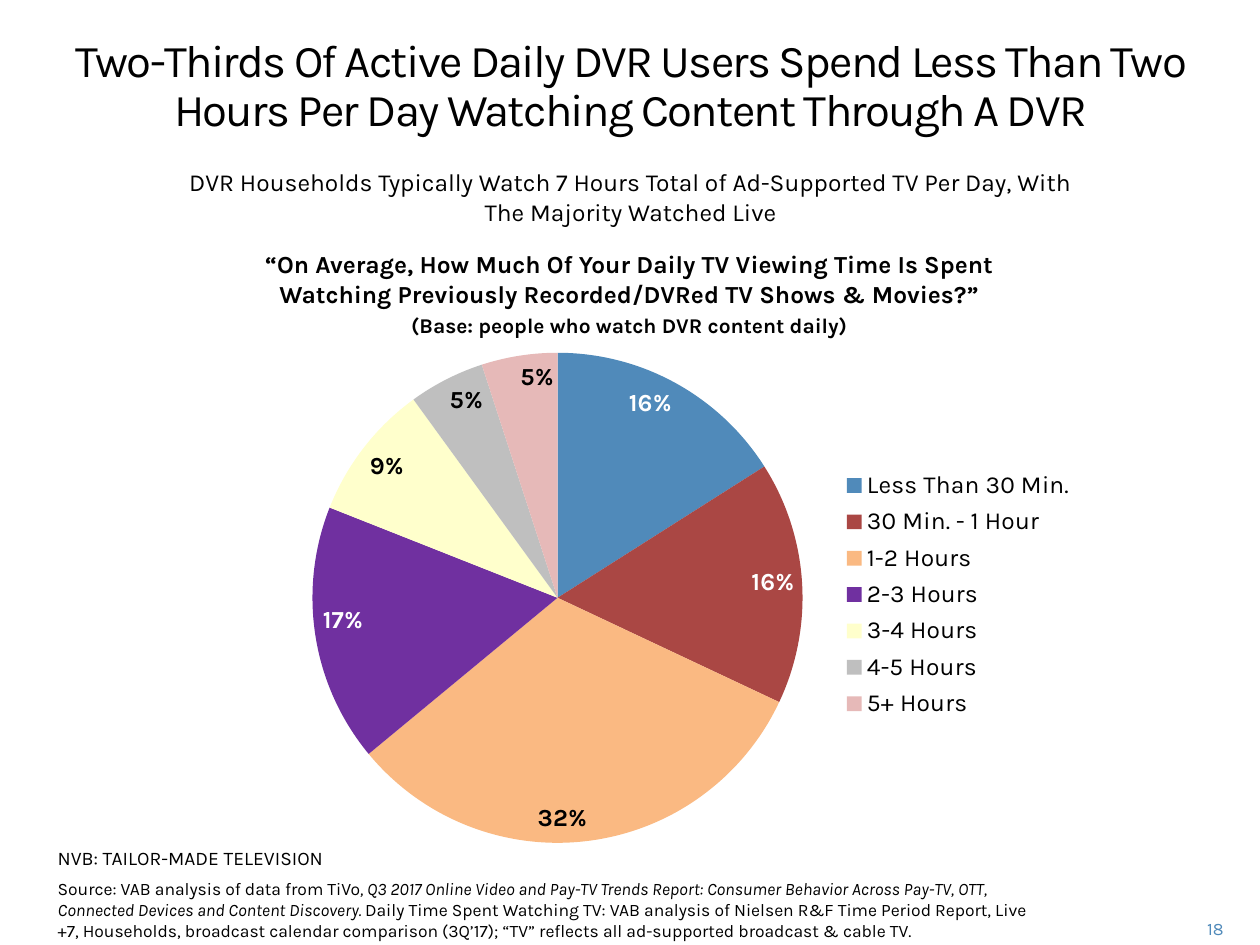
from dataclasses import dataclass

from lxml import etree
from pptx import Presentation
from pptx.chart.data import CategoryChartData
from pptx.dml.color import RGBColor
from pptx.enum.chart import XL_CHART_TYPE, XL_LABEL_POSITION, XL_LEGEND_POSITION
from pptx.enum.text import PP_ALIGN
from pptx.oxml.ns import qn
from pptx.util import Inches, Pt

PIE = XL_CHART_TYPE.PIE
INNER = XL_LABEL_POSITION.INSIDE_END
RIGHT_SIDE = XL_LEGEND_POSITION.RIGHT
LEFT, MID, RIGHT = PP_ALIGN.LEFT, PP_ALIGN.CENTER, PP_ALIGN.RIGHT


@dataclass(frozen=True)
class Theme:
    font: str = "Karla"
    ink: str = "000000"
    pale: str = "FFFFFF"
    blue: str = "508ABA"
    title: int = 26
    body: int = 14
    base: int = 12
    tag: int = 11
    note: int = 10


@dataclass(frozen=True)
class Box:
    left: float
    top: float
    width: float
    height: float

    def inches(self) -> tuple:
        return tuple(Inches(n) for n in (self.left, self.top, self.width, self.height))


@dataclass(frozen=True)
class Run:
    text: str
    italic: bool = False


@dataclass(frozen=True)
class Slice:
    name: str
    share: float
    fill: str
    ink: str


THEME = Theme()
SLICES = [
    Slice("Less Than 30 Min.", 0.16, THEME.blue, THEME.pale),
    Slice("30 Min. - 1 Hour", 0.16, "AA4744", THEME.pale),
    Slice("1-2 Hours", 0.32, "FAB982", THEME.ink),
    Slice("2-3 Hours", 0.17, "7030A0", THEME.pale),
    Slice("3-4 Hours", 0.09, "FFFFCC", THEME.ink),
    Slice("4-5 Hours", 0.05, "BFBFBF", THEME.ink),
    Slice("5+ Hours", 0.05, "E6B9B8", THEME.ink),
]
CHART = Box(1.25, 2.39, 8.33, 4.44)
PLOT = Box(2.48, 2.8, 3.89, 3.89)
LEGEND = Box(6.63, 3.68, 1.95, 2.08)


def style(font, size: int, color: str = THEME.ink, bold: bool = False) -> None:
    font.name = THEME.font
    font.size = Pt(size)
    font.bold = bold
    font.color.rgb = RGBColor.from_string(color)


def write(frame, runs: list[Run], *, size: int, color: str = THEME.ink,
          bold: bool = False, align=LEFT, track: float = 0,
          pitch: float = 0, before: float = 0) -> None:
    """Add a paragraph, using the first one while it is still empty."""
    para = frame.paragraphs[0] if not frame.text else frame.add_paragraph()
    para.alignment = align
    if pitch:
        para.line_spacing = Pt(pitch)
    if before:
        para.space_before = Pt(before)
    for part in runs:
        run = para.add_run()
        run.text = part.text
        style(run.font, size, color, bold)
        run.font.italic = part.italic
        if track:
            run.font._element.set("spc", str(round(track * 100)))


def add_box(slide, box: Box):
    frame = slide.shapes.add_textbox(*box.inches()).text_frame
    frame.word_wrap = True
    return frame


def place(node, box: Box, inner: bool = False) -> None:
    """Fix a chart part at a slide position, as fractions of the chart."""
    old = node.find(qn("c:layout"))
    if old is not None:
        node.remove(old)
    layout = etree.Element(qn("c:layout"))
    manual = etree.SubElement(layout, qn("c:manualLayout"))
    vals = {
        "xMode": "edge",
        "yMode": "edge",
        "x": (box.left - CHART.left) / CHART.width,
        "y": (box.top - CHART.top) / CHART.height,
        "w": box.width / CHART.width,
        "h": box.height / CHART.height,
    }
    if inner:
        vals = {"layoutTarget": "inner", **vals}
    for key, val in vals.items():
        etree.SubElement(manual, qn(f"c:{key}")).set("val", str(val))
    pos = node.find(qn("c:legendPos"))
    if pos is not None:
        pos.addnext(layout)
    else:
        node.insert(0, layout)


def add_pie(slide) -> None:
    data = CategoryChartData(number_format="0%")
    data.categories = [s.name for s in SLICES]
    data.add_series("Series 1", [s.share for s in SLICES])
    chart = slide.shapes.add_chart(PIE, *CHART.inches(), data).chart
    style(chart.font, THEME.body)
    chart.has_title = False
    chart.has_legend = True
    chart.legend.position = RIGHT_SIDE
    chart.legend.include_in_layout = False
    style(chart.legend.font, THEME.body)

    plot = chart.plots[0]
    plot.vary_by_categories = True
    plot.has_data_labels = True
    series = plot.series[0]
    labels = series.data_labels
    labels.show_value = True
    labels.number_format = "0%"
    labels.number_format_is_linked = False
    labels.position = INNER
    style(labels.font, THEME.body, bold=True)
    for i, part in enumerate(SLICES):
        point = series.points[i]
        point.format.fill.solid()
        point.format.fill.fore_color.rgb = RGBColor.from_string(part.fill)
        if part.ink != THEME.ink:
            style(point.data_label.font, THEME.body, part.ink, True)
            point.data_label.position = INNER

    area = chart._chartSpace.chart.plotArea
    place(area, PLOT, inner=True)
    place(chart.legend._element, LEGEND)


def main() -> None:
    deck = Presentation()
    deck.slide_width, deck.slide_height = Inches(10), Inches(7.5)
    slide = deck.slides.add_slide(deck.slide_layouts[6])
    add_pie(slide)

    write(add_box(slide, Box(0.32, 0.25, 9.37, 0.96)),
          [Run("Two-Thirds Of Active Daily DVR Users Spend Less Than Two "
               "Hours Per Day Watching Content Through A DVR")],
          size=THEME.title, align=MID, track=-1, pitch=28)
    write(add_box(slide, Box(1.38, 1.28, 7.25, 0.57)),
          [Run("DVR Households Typically Watch 7 Hours Total of Ad-Supported "
               "TV Per Day, With The Majority Watched Live")],
          size=THEME.body, align=MID)
    ask = add_box(slide, Box(1.7, 1.93, 6.59, 0.49))
    write(ask, [Run("“On Average, How Much Of Your Daily TV Viewing Time Is Spent "
                    "Watching Previously Recorded/DVRed TV Shows & Movies?”")],
          size=THEME.body, bold=True, align=MID)
    write(ask, [Run("(Base: people who watch DVR content daily)")],
          size=THEME.base, bold=True, align=MID, before=2.4)
    write(add_box(slide, Box(0.36, 6.67, 3.08, 0.47)),
          [Run("NVB: TAILOR-MADE TELEVISION")], size=THEME.tag)
    write(add_box(slide, Box(0.36, 6.92, 7.97, 0.61)),
          [Run("Source: VAB analysis of data from TiVo"),
           Run(", Q3 2017 Online Video and Pay-TV Trends Report: Consumer Behavior "
               "Across Pay-TV, OTT, Connected Devices and Content Discovery. ", True),
           Run("Daily Time Spent Watching TV: VAB analysis of Nielsen R&F Time "
               "Period Report, Live +7, Households, broadcast calendar comparison "
               "(3Q’17); “TV” reflects all ad-supported broadcast & cable TV.")],
          size=THEME.note)
    write(add_box(slide, Box(9.2, 7.24, 0.61, 0.25)), [Run("18")],
          size=THEME.note, color=THEME.blue, align=RIGHT)
    deck.save("out.pptx")


if __name__ == "__main__":
    main()
